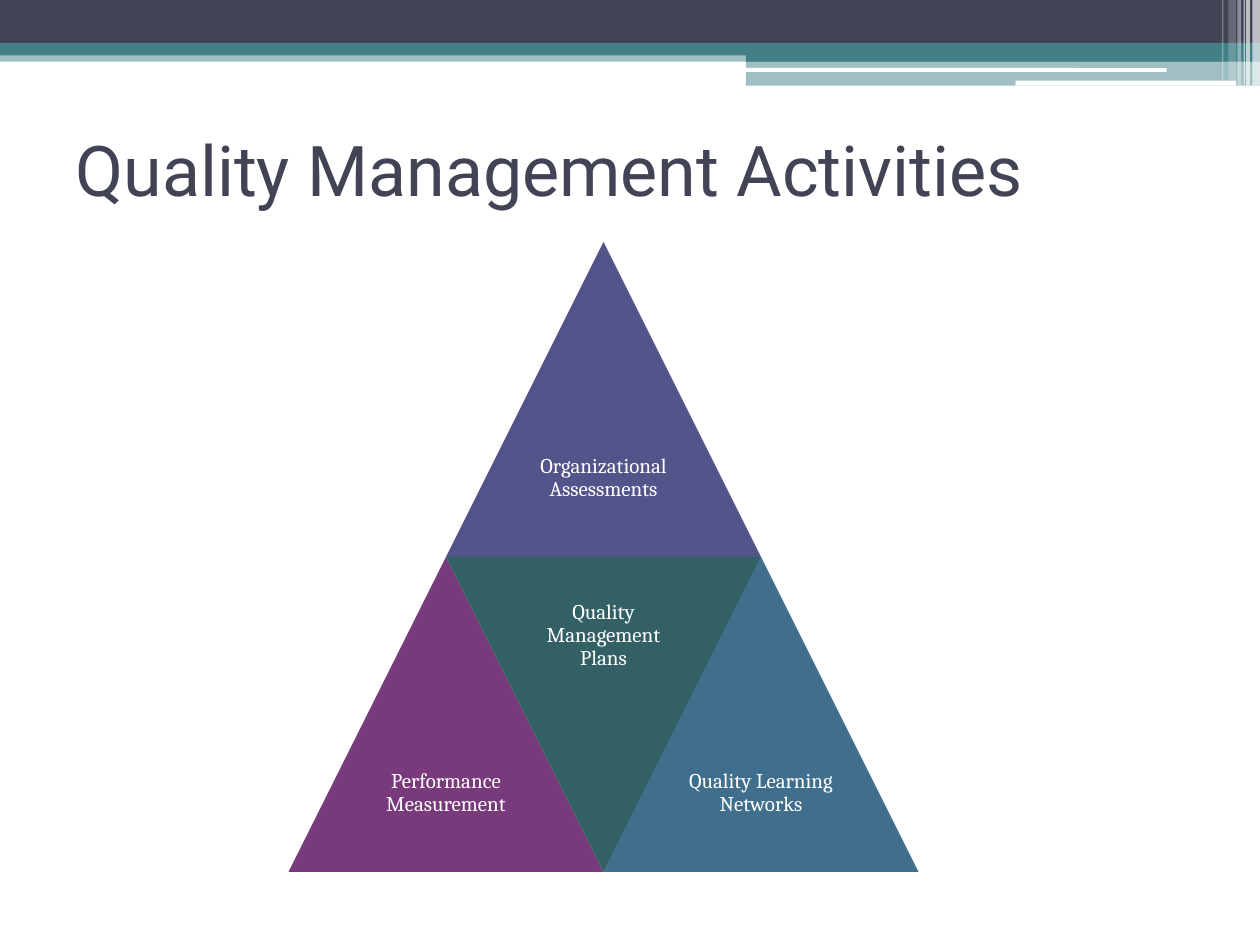
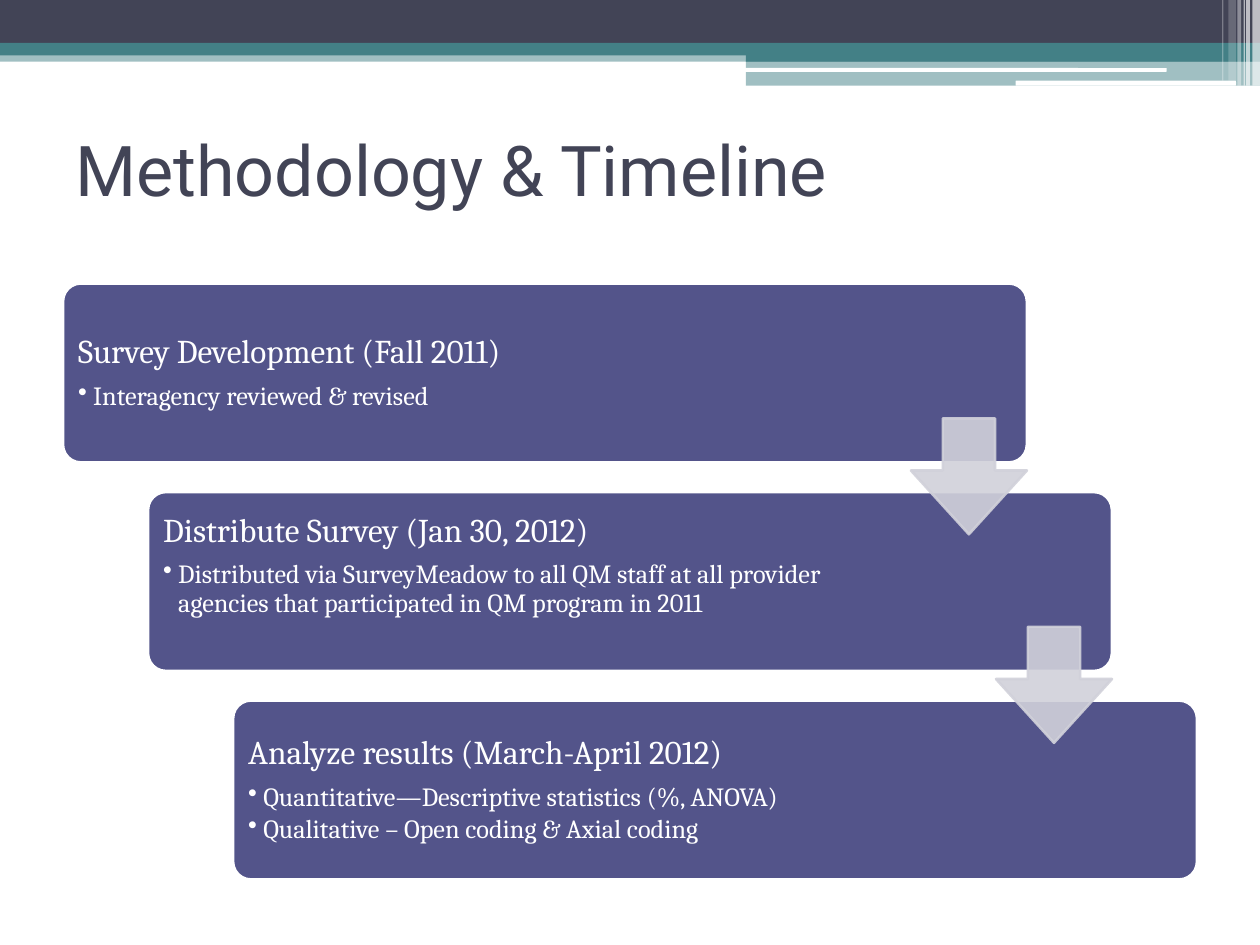
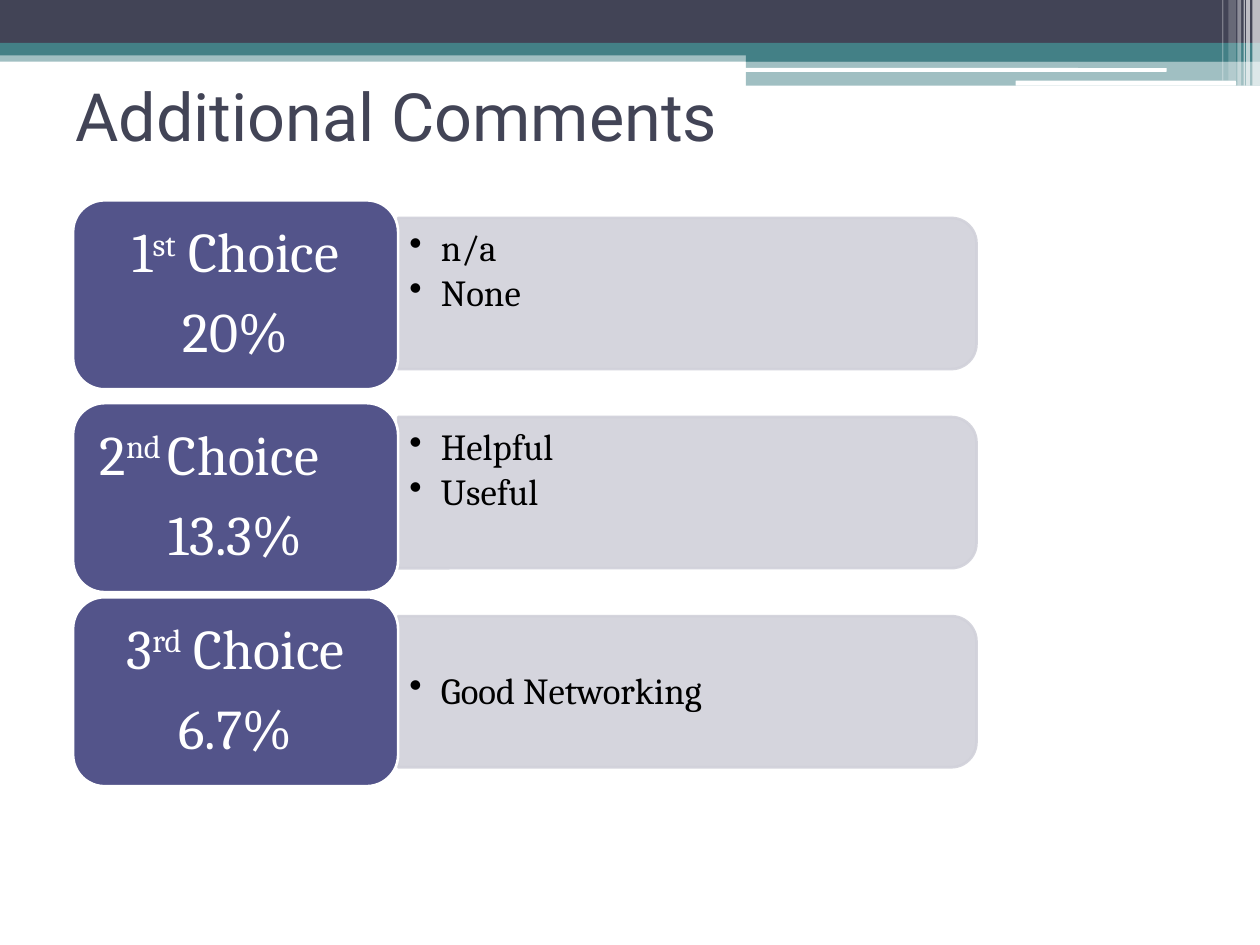
from collections import namedtuple

from lxml import etree
from pptx import Presentation
from pptx import util as u
from pptx.dml.color import RGBColor
from pptx.enum import shapes, text
from pptx.oxml.ns import qn

Box = namedtuple("Box", "left top width height")

COLORS = {
    "navy": "424456", "teal": "438086", "white": "FFFFFF", "black": "000000",
    "indigo": "53548A", "plum": "783A7A", "pine": "326065", "steel": "406F8D",
    "mist": "D1D1DA",
}
KIND = shapes.MSO_SHAPE
CENTER = text.PP_ALIGN.CENTER
TITLE_FONT, BODY_FONT = "Roboto", "Cambria"

BAND = [
    (Box(0, 0.4, 10, 0.09), "teal", 50),
    (Box(0, 0, 10, 0.34), "navy", 100),
    (Box(0, 0.34, 10, 0.1), "teal", 100),
    (Box(5.92, 0.39, 4.08, 0.1), "teal", 100),
    (Box(5.92, 0.48, 4.08, 0.2), "teal", 50),
]
BAND_LINES = [Box(5.91, 0.54, 3.35, 0.03), Box(8.06, 0.64, 1.75, 0.04)]
BAND_STRIPES = [
    (9.94, 0.06, 0.68, 65), (9.89, 0.03, 0.68, 65), (9.87, 0.01, 0.68, 60),
    (9.82, 0.03, 0.68, 40), (9.75, 0.06, 0.64, 20), (9.7, 0.01, 0.64, 30),
]

ACTIVITIES = [
    ("Organizational Assessments", "indigo", 0.25, 0, False),
    ("Performance Measurement", "plum", 0, 0.5, False),
    ("Quality Management Plans", "pine", 0.25, 0.5, True),
    ("Quality Learning Networks", "steel", 0.5, 0.5, False),
]
STEPS = [
    ("Survey Development (Fall 2011)", ["Interagency reviewed & revised"], 0),
    ("Distribute Survey (Jan 30, 2012)",
     ["Distributed via SurveyMeadow to all QM staff at all provider "
      "agencies that participated in QM program in 2011"], 0.25),
    ("Analyze results (March-April 2012)",
     ["Quantitative—Descriptive statistics (%, ANOVA)",
      "Qualitative – Open coding & Axial coding"], 0),
]
CHOICES = [
    ("1^st^ Choice", CENTER, "20%", ["n/a", "None"], 1.59, 0.35),
    ("2^nd ^Choice", None, "13.3%", ["Helpful", "Useful"], 3.2, 0.35),
    ("3^rd^ Choice", CENTER, "6.7%", ["Good Networking"], 4.74, 0),
]


def inches(box):
    return [u.Inches(value) for value in box]


def inset(box, x, y):
    return Box(box.left + x, box.top + y, box.width - 2 * x, box.height - 2 * y)


def add_shape(slide, kind, box, color, alpha=100, line=None, adjust=(), rotation=0):
    shape = slide.shapes.add_shape(kind, *inches(box))
    shape.shadow.inherit = False
    shape.rotation = rotation
    for index, value in enumerate(adjust):
        shape.adjustments[index] = value
    shape.fill.solid()
    shape.fill.fore_color.rgb = RGBColor.from_string(COLORS[color])
    if line:
        shape.line.color.rgb = RGBColor.from_string(COLORS[line])
        shape.line.width = u.Pt(1.5)
    else:
        shape.line.fill.background()
    if alpha < 100:
        for paint in shape._element.spPr.iter(qn("a:srgbClr")):
            etree.SubElement(paint, qn("a:alpha")).set("val", str(alpha * 1000))
    return shape


def add_frame(slide, box, margins=(0.1, 0.05), below=0):
    frame = slide.shapes.add_textbox(*inches(box)).text_frame
    frame.word_wrap = True
    frame.vertical_anchor = text.MSO_ANCHOR.MIDDLE
    frame.margin_left = frame.margin_right = u.Inches(margins[0])
    frame.margin_top = u.Inches(margins[1])
    frame.margin_bottom = u.Inches(margins[1] + below)
    return frame


def write(frame, content, size, color="white", font=BODY_FONT, align=None,
          spacing=0.9, after=0.35, bullet=0):
    first = frame.paragraphs[0]
    para = frame.add_paragraph() if first.runs else first
    para.alignment = align
    para.line_spacing = spacing
    para.space_after = u.Pt(size * after)
    if bullet:
        para.level = 1
        properties = para._p.get_or_add_pPr()
        properties.set("marL", str(u.Inches(bullet)))
        properties.set("indent", str(-u.Inches(bullet)))
        etree.SubElement(properties, qn("a:buChar")).set("char", "•")
    for index, part in enumerate(content.split("^")):
        span = para.add_run()
        span.text = part
        span.font.size = u.Pt(size)
        span.font.name = font
        span.font.color.rgb = RGBColor.from_string(COLORS[color])
        if index % 2:
            span._r.get_or_add_rPr().set("baseline", "30000")


def write_bullets(frame, items, size, indent, color="white"):
    for item in items:
        write(frame, item, size, color=color, after=0.15, bullet=indent)


def add_band(slide):
    for box, color, alpha in BAND:
        add_shape(slide, KIND.RECTANGLE, box, color, alpha)
    for box in BAND_LINES:
        add_shape(slide, KIND.ROUNDED_RECTANGLE, box, "white")
    for left, width, height, alpha in BAND_STRIPES:
        add_shape(slide, KIND.RECTANGLE, Box(left, 0, width, height), "white", alpha)


def add_page(deck, title, top=0.75, size=40):
    page = deck.slides.add_slide(deck.slide_layouts[6])
    add_band(page)
    frame = add_frame(page, Box(0.5, top, 9, 1.17))
    write(frame, title, size, color="navy", font=TITLE_FONT, spacing=1, after=0)
    return page


def add_pyramid(slide, box):
    side = box.width / 2
    for label, color, across, down, inverted in ACTIVITIES:
        left = box.left + across * box.width
        top = box.top + down * box.height
        add_shape(slide, KIND.ISOSCELES_TRIANGLE, Box(left, top, side, side), color,
                  rotation=180 if inverted else 0)
        label_top = top if inverted else top + side / 2
        label_box = Box(left + side / 4, label_top, side / 2, side / 2)
        write(add_frame(slide, label_box, (0.05, 0.05)), label, 12, align=CENTER)


def add_staircase(slide, box):
    width, height = 7.65, 1.42
    gaps = len(STEPS) - 1
    steps = [Box(box.left + index * (box.width - width) / gaps,
                 box.top + index * (box.height - height) / gaps, width, height)
             for index in range(len(STEPS))]
    for step, (heading, items, below) in zip(steps, STEPS):
        add_shape(slide, KIND.ROUNDED_RECTANGLE, step, "indigo", line="white", adjust=[0.1])
        text_box = inset(step, 0.04, 0.04)._replace(width=5.97)
        frame = add_frame(slide, text_box, (0.08, 0.08), below)
        write(frame, heading, 19)
        write_bullets(frame, items, 15, 0.12)
    for step in steps[:-1]:
        arrow = Box(step.left + 6.73, step.top + 1.07, 0.92, 0.92)
        add_shape(slide, KIND.DOWN_ARROW, arrow, "mist", 90, "mist", [0.45, 0.55])


def add_choices(slide, box):
    label_width, bar_height, pitch = 2.58, 1.2, 1.58
    bar_width = box.width - label_width
    for index, (rank, align, share, items, label_top, below) in enumerate(CHOICES):
        bar = Box(box.left + label_width, box.top + index * pitch, bar_width, bar_height)
        turn = (bar_width - bar_height) / 2
        upright = Box(bar.left + turn, bar.top - turn, bar_height, bar_width)
        add_shape(slide, KIND.ROUND_2_SAME_RECTANGLE, upright, "mist", 90, "mist", rotation=90)
        bar_text = Box(bar.left, bar.top + 0.06, bar_width - 0.06, bar_height - 0.11)
        frame = add_frame(slide, bar_text, (0.09, 0.04), below)
        write_bullets(frame, items, 21, 0.25, "black")

        label = Box(box.left, label_top, label_width, 1.5)
        add_shape(slide, KIND.ROUNDED_RECTANGLE, label, "indigo", line="white")
        frame = add_frame(slide, inset(label, 0.08, 0.07), (0.13, 0.07))
        write(frame, rank, 32, align=align)
        write(frame, share, 32, align=CENTER)


def main():
    deck = Presentation()
    deck.slide_width, deck.slide_height = u.Inches(10), u.Inches(7.5)
    add_pyramid(add_page(deck, "Quality Management Activities"), Box(2.29, 1.92, 5, 5))
    add_staircase(add_page(deck, "Methodology & Timeline"), Box(0.5, 2.25, 9, 4.73))
    add_choices(add_page(deck, "Additional Comments", top=0.33, size=38),
                Box(0.58, 1.73, 7.17, 4.36))
    deck.save("out.pptx")


if __name__ == "__main__":
    main()
